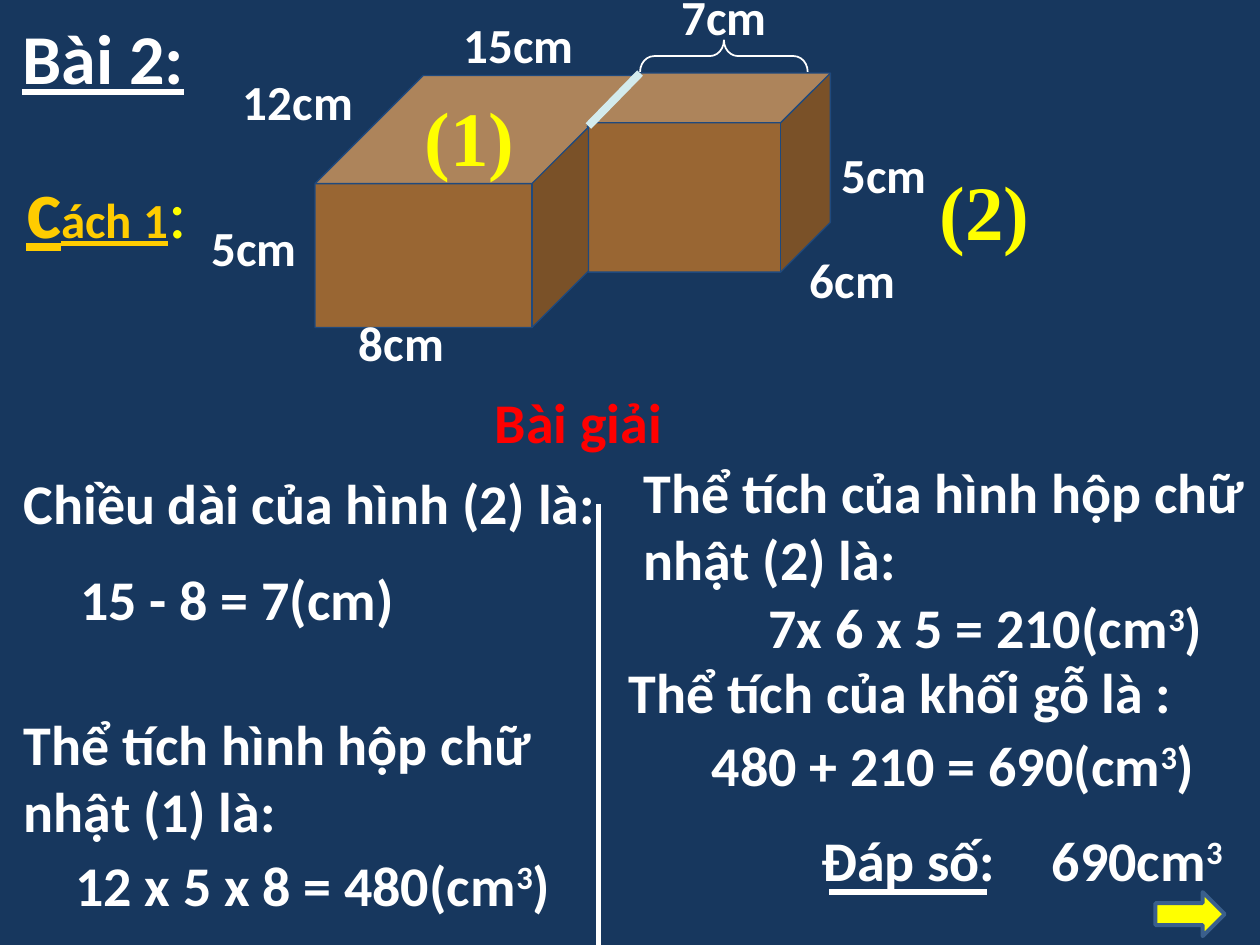
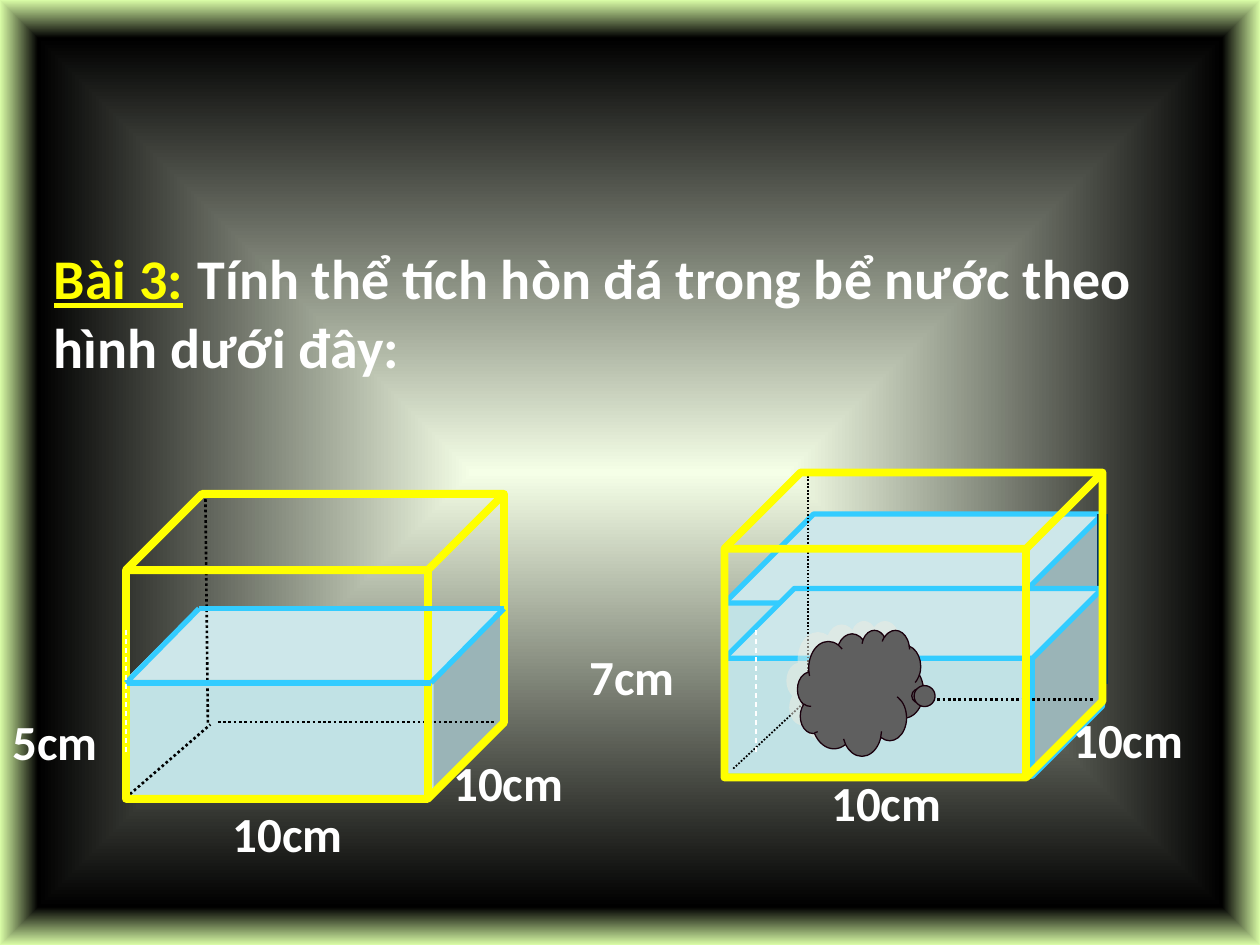
import pptx
import pptx.dml.color
import pptx.enum.dml
import pptx.enum.shapes
import pptx.enum.text
import pptx.oxml
import pptx.oxml.ns
import pptx.util

SLIDE_WIDTH = pptx.util.Inches(10)
SLIDE_HEIGHT = pptx.util.Inches(7.5)
CELL = SLIDE_WIDTH // 10

WHITE, YELLOW, GOLD, RED, BLACK = "FFFFFF", "FFFF00", "FFCC00", "FF0000", "000000"
NAVY, EDGE, WOOD, SEAM = "17375E", "1F497D", "996633", "D3EBED"
WATER, SURFACE, STONE = "C1E2E5", "33CCFF", "5F5F5F"

DASH = pptx.enum.dml.MSO_LINE.DASH
DOTS = pptx.enum.dml.MSO_LINE.ROUND_DOT
PRESETS = pptx.enum.shapes.MSO_SHAPE

BODY = {"name": "Calibri", "size": 32, "bold": True, "underline": False, "color": WHITE}
DIMENSION = {"size": 28}
NUMERAL = {"name": "Times New Roman", "size": 44, "color": YELLOW}
NAMESPACE = 'xmlns:a="http://schemas.openxmlformats.org/drawingml/2006/main"'


def rgb(value):
    return pptx.dml.color.RGBColor.from_string(value)


def cells(*lengths):
    return [round(length * CELL) for length in lengths]


def set_line(line, color, width, dash=None):
    if color is None:
        line.fill.background()
        return
    line.color.rgb = rgb(color)
    line.width = pptx.util.Pt(width)
    if dash:
        line.dash_style = dash


def set_fill(shape, color):
    if color is None:
        shape.fill.background()
    else:
        shape.fill.solid()
        shape.fill.fore_color.rgb = rgb(color)


def solid(slide, kind, place, fill=None, line=None, width=0.75, adjust=(), turn=0):
    shape = slide.shapes.add_shape(kind, *cells(*place))
    shape.shadow.inherit = False
    shape.rotation = turn
    for index, value in enumerate(adjust):
        shape.adjustments[index] = value
    set_fill(shape, fill)
    set_line(shape.line, line, width)
    return shape


def rule(slide, start, end, color, width, dash=None):
    stroke = slide.shapes.add_connector(
        pptx.enum.shapes.MSO_CONNECTOR.STRAIGHT, *cells(*start, *end))
    set_line(stroke.line, color, width, dash)
    stroke.element.spPr.append(pptx.oxml.parse_xml(f"<a:effectLst {NAMESPACE}/>"))


def add_run(paragraph, words, changes):
    style = {**BODY, **changes}
    run = paragraph.add_run()
    run.text = words
    run.font.color.rgb = rgb(style.pop("color"))
    raised = style.pop("raised", False)
    style["size"] = pptx.util.Pt(style["size"])
    for attribute, value in style.items():
        setattr(run.font, attribute, value)
    if raised:
        run._r.get_or_add_rPr().set("baseline", "30000")


def write(slide, left, top, width, height, *runs):
    frame = slide.shapes.add_textbox(*cells(left, top, width, height)).text_frame
    frame.word_wrap = True
    frame.auto_size = pptx.enum.text.MSO_AUTO_SIZE.SHAPE_TO_FIT_TEXT
    for words, changes in runs:
        add_run(frame.paragraphs[0], words, changes)


def dimension(slide, left, top, words, width=1.25):
    write(slide, left, top, width, 0.57, (words, DIMENSION))


def statement(slide, left, top, width, words, height=0.63, **changes):
    write(slide, left, top, width, height, (words, changes))


def volume(slide, left, top, width, words, ending=")"):
    runs = [(words, {}), ("3", {"raised": True})]
    if ending:
        runs.append((ending, {}))
    write(slide, left, top, width, 0.63, *runs)


def bezier(start, first, second, end, steps=8):
    for step in range(1, steps + 1):
        t = step / steps
        weights = ((1 - t) ** 3, 3 * t * (1 - t) ** 2, 3 * t * t * (1 - t), t ** 3)
        yield tuple(sum(w * point[axis] for w, point in zip(weights, (start, first, second, end)))
                    for axis in (0, 1))


def depth_mark(slide, points):
    builder = slide.shapes.build_freeform(*points[0], scale=CELL)
    outline = [*bezier(*points[:4]), *bezier(*points[3:])]
    builder.add_line_segments(outline, close=False)
    mark = builder.convert_to_shape()
    mark.shadow.inherit = False
    set_fill(mark, None)
    set_line(mark.line, WHITE, 0.75, DASH)


def tank(slide, left, top, hidden_edges):
    for start, end, width in hidden_edges:
        rule(slide, start, end, BLACK, width, DOTS)
    solid(slide, PRESETS.CUBE, (left, top, 3, 2.42), None, YELLOW, 4.5, [0.25])


def glow_background(slide):
    slide.background.fill.solid()
    plain = next(slide.element.iter(pptx.oxml.ns.qn("a:solidFill")))
    stops = "".join(
        f'<a:gs pos="{share * 1000}"><a:srgbClr val="{color}"/></a:gs>'
        for share, color in ((0, "F5FFE7"), (92, BLACK), (100, "DAFDA7")))
    middle = " ".join(f'{side}="50000"' for side in "ltrb")
    glow = pptx.oxml.parse_xml(
        f'<a:gradFill {NAMESPACE} rotWithShape="1"><a:gsLst>{stops}</a:gsLst>'
        f'<a:path path="shape"><a:fillToRect {middle}/></a:path></a:gradFill>')
    plain.getparent().replace(plain, glow)


def cast_shadow(shape):
    effects = next(shape.element.iter(pptx.oxml.ns.qn("a:effectLst")))
    effects.append(pptx.oxml.parse_xml(
        f'<a:outerShdw {NAMESPACE} blurRad="0" dist="{pptx.util.Pt(7.8)}" dir="{220 * 60000}" '
        'algn="ctr" rotWithShape="0"><a:srgbClr val="EEECE1"><a:alpha val="50000"/>'
        '</a:srgbClr></a:outerShdw>'))


def draw_wood_block(slide):
    solid(slide, PRESETS.CUBE, (2.5, 0.6, 2.58, 2), WOOD, EDGE, adjust=[0.429])
    rule(slide, (4.67, 1.02), (5.08, 0.6), EDGE, 3)
    solid(slide, PRESETS.CUBE, (4.67, 0.58, 1.92, 1.58), WOOD, EDGE, adjust=[0.25])
    for color, width in ((EDGE, 3), (SEAM, 4.5)):
        rule(slide, (4.67, 1), (5.08, 0.58), color, width)
    for left, top, words in (
            (3.58, 0.07, "15cm"), (1.83, 0.52, "12cm"), (2.75, 2.43, "8cm"),
            (6.33, 1.93, "6cm"), (6.58, 1.1, "5cm"), (5.31, -0.16, "7cm"),
            (1.58, 1.68, "5cm")):
        dimension(slide, left, top, words)
    solid(slide, PRESETS.LEFT_BRACE, (5.62, -0.22, 0.25, 1.33), None, WHITE, 1,
          [0.444, 0.5], 90)
    for left, top, words in ((3.27, 0.66, "(1)"), (7.36, 1.25, "(2)")):
        write(slide, left, top, 1, 0.59, (words, NUMERAL))


def write_solution(slide):
    statement(slide, 3.83, 3.03, 1.56, "Bài giải", color=RED)
    statement(slide, 0.09, 3.67, 4.83, "Chiều dài của hình (2) là:")
    statement(slide, 0.54, 4.43, 3.73, "15 - 8 = 7(cm)")
    statement(slide, 0.09, 5.58, 4.42, "Thể tích hình hộp chữ nhật (1) là:", 1.17)
    volume(slide, 0.5, 6.7, 4.75, "12 x 5 x 8 = 480(cm")
    statement(slide, 5.01, 3.58, 5.02, "Thể tích của hình hộp chữ nhật (2) là:", 1.17)
    volume(slide, 6, 4.65, 4.42, "7x 6 x 5 = 210(cm")
    statement(slide, 4.89, 5.17, 4.92, "Thể tích của khối gỗ là :")
    volume(slide, 5.55, 5.75, 4.45, "480 + 210 = 690(cm")
    statement(slide, 6.42, 6.5, 1.83, "Đáp số:")
    volume(slide, 8.25, 6.5, 1.83, "690cm", "")
    rule(slide, (6.58, 7.08), (7.83, 7.08), WHITE, 3)
    rule(slide, (4.75, 4), (4.75, 7.5), WHITE, 3)


def build_wood_exercise(slide):
    slide.background.fill.solid()
    slide.background.fill.fore_color.rgb = rgb(NAVY)
    draw_wood_block(slide)
    statement(slide, 0.08, 0.07, 1.75, "Bài 2:", 0.77, size=40, underline=True)
    write(slide, 0.11, 1.18, 1.56, 0.9,
          ("c", {"size": 48, "color": GOLD, "underline": True}),
          ("ách 1", {"size": 28, "color": GOLD, "underline": True}),
          (":", {"size": 40, "color": YELLOW, "bold": False}))
    write_solution(slide)
    solid(slide, PRESETS.RIGHT_ARROW, (9.17, 7.08, 0.55, 0.35), YELLOW, "3A5F8C", 2.25)


def draw_stone_tank(slide):
    solid(slide, PRESETS.CUBE, (5.75, 4.08, 3, 2.02), WATER, SURFACE, 3, [0.35])
    rule(slide, (8.75, 4.08), (8.75, 5.43), "003366", 6)
    solid(slide, PRESETS.CUBE, (5.75, 4.67, 3, 1.49), WATER, SURFACE, 3, [0.372])
    tank(slide, 5.75, 3.75, (
        ((6.41, 3.75), (6.41, 5.61), 1),
        ((5.82, 6.1), (6.41, 5.55), 1),
        ((6.48, 5.55), (8.68, 5.55), 1.5)))
    cast_shadow(solid(slide, PRESETS.CLOUD_CALLOUT, (6.33, 5, 1, 1), STONE, "1A000D",
                      adjust=[0.471, 0.023]))
    depth_mark(slide, ((5.66, 4.92), (5.56, 5.05), (5.5, 5.26), (5.5, 5.47),
                       (5.5, 5.81), (5.64, 6.1), (5.83, 6.17)))


def draw_water_tank(slide):
    solid(slide, PRESETS.CUBE, (1, 4.83, 3, 1.5), WATER, adjust=[0.372])
    tank(slide, 1, 3.92, (
        ((1.63, 3.92), (1.65, 5.75), 1.5),
        ((1, 6.33), (1.67, 5.75), 1.5),
        ((1.73, 5.73), (3.93, 5.73), 1.5)))
    corners = [(1, 5.42), (3.42, 5.42), (4, 4.83), (1.58, 4.83)]
    for start, end in zip(corners, corners[1:] + corners[:1]):
        rule(slide, start, end, SURFACE, 3)
    depth_mark(slide, ((0.9, 5.43), (0.86, 5.53), (0.83, 5.68), (0.83, 5.84),
                       (0.83, 6.09), (0.89, 6.3), (0.97, 6.35)))


def build_stone_exercise(slide):
    glow_background(slide)
    draw_stone_tank(slide)
    write(slide, 0.33, 1.83, 9.17, 1.23,
          ("Bài 3:", {"color": YELLOW, "underline": True}),
          (" ", {"size": 36, "bold": False}),
          ("Tính thể tích hòn đá trong bể nước theo hình dưới đây:", {}))
    draw_water_tank(slide)
    for left, top, words in (
            (4.58, 5.08, "7cm"), (6.5, 6.08, "10cm"), (8.42, 5.58, "10cm"),
            (0, 5.6, "5cm"), (1.75, 6.33, "10cm"), (3.5, 5.92, "10cm")):
        dimension(slide, left, top, words)


def main():
    deck = pptx.Presentation()
    deck.slide_width, deck.slide_height = SLIDE_WIDTH, SLIDE_HEIGHT
    blank = deck.slide_layouts[6]
    for build in (build_wood_exercise, build_stone_exercise):
        build(deck.slides.add_slide(blank))
    deck.save("out.pptx")


if __name__ == "__main__":
    main()
